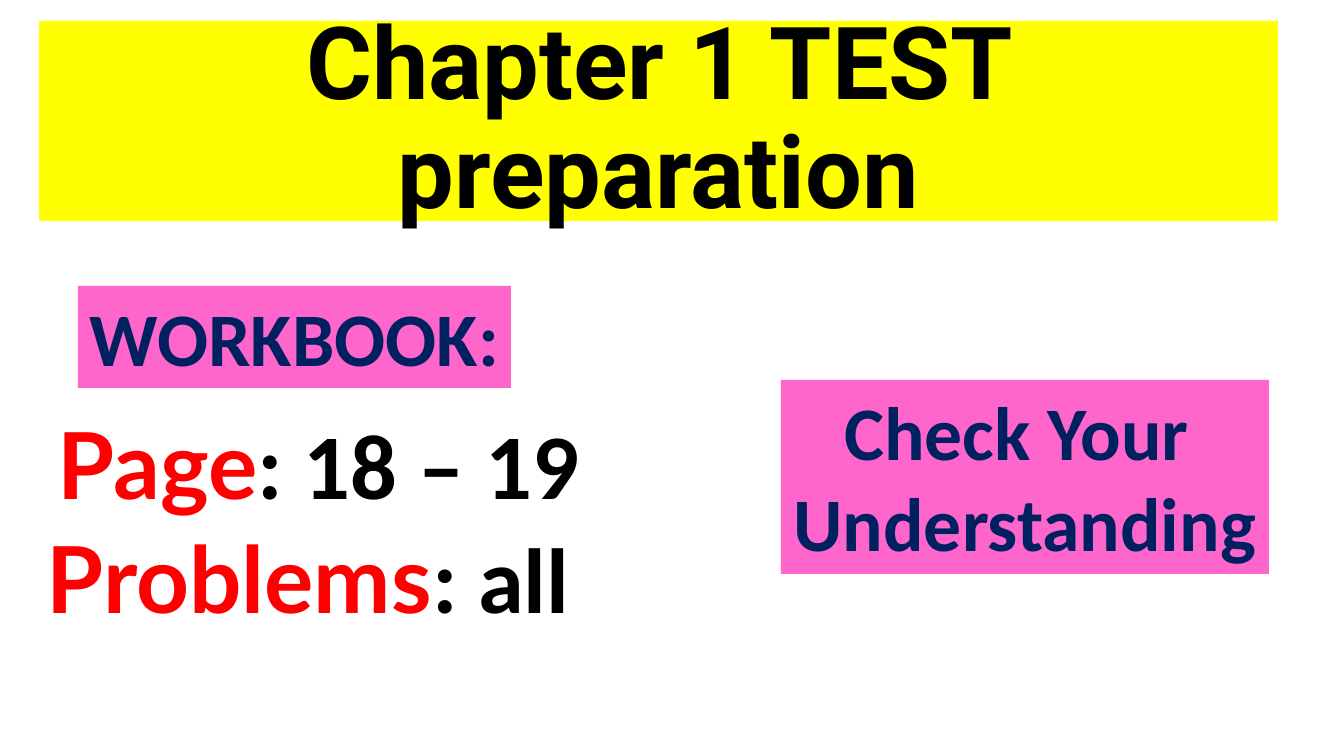
from lxml.etree import SubElement
from pptx import Presentation
from pptx.dml.color import RGBColor
from pptx.enum.shapes import MSO_SHAPE
from pptx.enum.text import MSO_ANCHOR, MSO_AUTO_SIZE, PP_ALIGN
from pptx.oxml.ns import qn
from pptx.util import Pt

SCALE = 914400 / 100.8
COLORS = {"yellow": "FFFF00", "pink": "FF66CC", "navy": "002060",
          "red": "FF0000", "black": "000000"}


def px(n):
    return round(n * SCALE)


def color(name):
    return RGBColor.from_string(COLORS[name])


def place(shape, box):
    shape.left, shape.top, shape.width, shape.height = map(px, box)


def paint(shape, name):
    shape.fill.solid()
    shape.fill.fore_color.rgb = color(name)
    shape.line.fill.background()


def write(shape, lines, size, spacing=None, before=0, wrap=True,
          anchor=MSO_ANCHOR.TOP, fit=MSO_AUTO_SIZE.NONE):
    frame = shape.text_frame
    frame.word_wrap = wrap
    frame.auto_size = fit
    frame.vertical_anchor = anchor
    for i, line in enumerate(lines):
        para = frame.add_paragraph() if i else frame.paragraphs[0]
        para.alignment = PP_ALIGN.CENTER
        para.space_before = Pt(before)
        if spacing:
            para.line_spacing = spacing
        for text, font, tint in line:
            run = para.add_run()
            run.text = text
            run.font.name = font
            run.font.size = Pt(size)
            run.font.bold = True
            run.font.color.rgb = color(tint)


def plain(shape):
    for para in shape.text_frame.paragraphs:
        props = para._p.get_or_add_pPr()
        props.set("marL", "0")
        props.set("indent", "0")
        SubElement(props, qn("a:buNone"))


def label(slide, box, lines):
    shape = slide.shapes.add_shape(MSO_SHAPE.RECTANGLE, *map(px, box))
    shape.shadow.inherit = False
    paint(shape, "pink")
    write(shape, [[(line, "Calibri", "navy")] for line in lines], 54,
          wrap=False, fit=MSO_AUTO_SIZE.SHAPE_TO_FIT_TEXT)


def main():
    deck = Presentation()
    deck.slide_width, deck.slide_height = px(1344), px(756)
    slide = deck.slides.add_slide(deck.slide_layouts[1])

    title = slide.shapes.title
    place(title, (39, 21, 1239, 200))
    paint(title, "yellow")
    write(title, [[("Chapter 1 TEST preparation", "Roboto", "black")]], 72,
          spacing=0.9, anchor=MSO_ANCHOR.MIDDLE)

    label(slide, (78, 286, 433, 102), ["WORKBOOK:"])

    tasks = slide.placeholders[1]
    place(tasks, (32, 415, 573, 243))
    pairs = [("Page", ": 18 – 19"), ("Problems", ": all ")]
    write(tasks, [[(head, "Lato", "red"), (rest, "Calibri", "black")]
                  for head, rest in pairs], 66, spacing=0.9, before=10)
    plain(tasks)

    label(slide, (781, 380, 488, 194), ["Check Your ", "Understanding"])
    deck.save("out.pptx")


if __name__ == "__main__":
    main()
